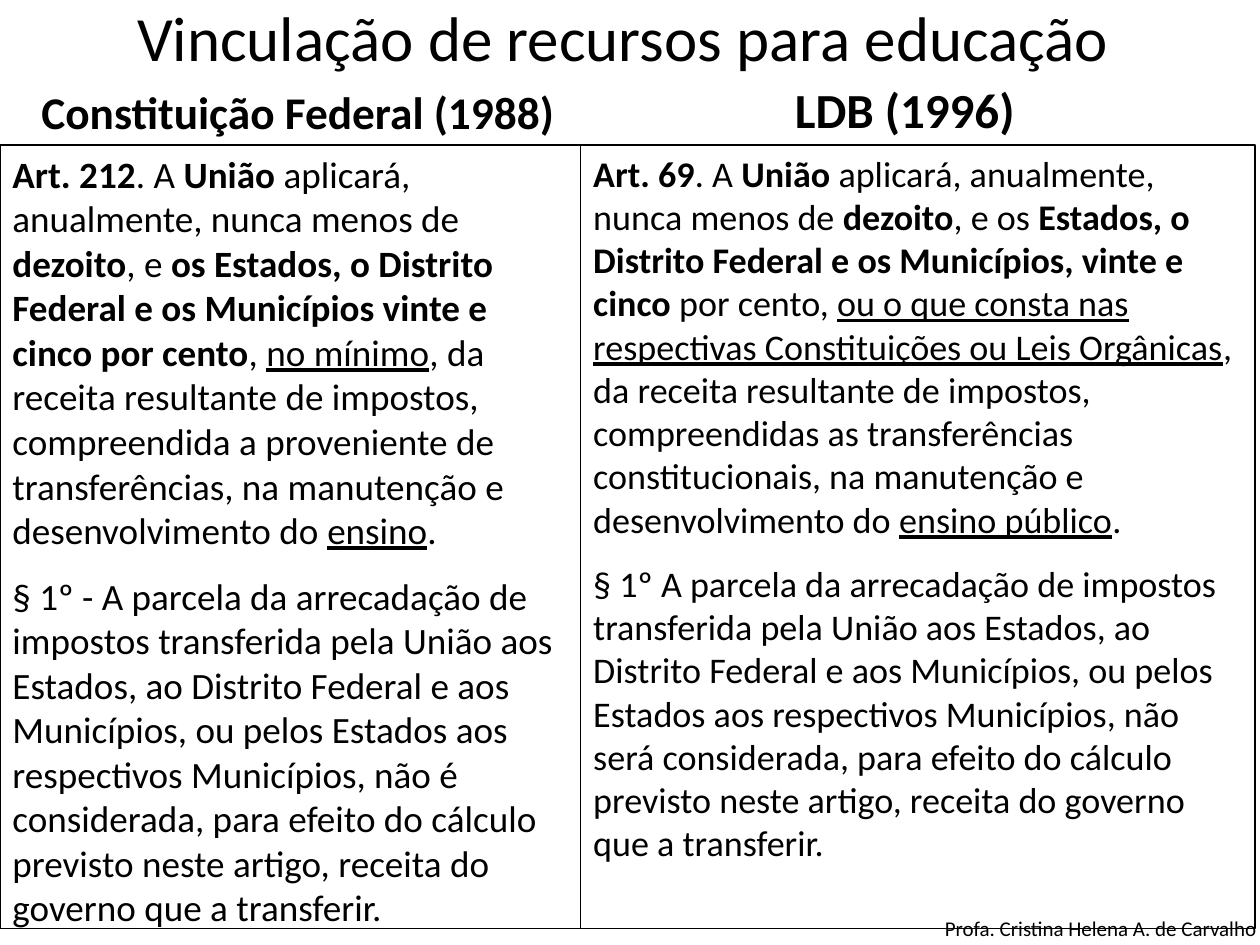
from pptx import Presentation
from pptx.dml.color import RGBColor
from pptx.enum.shapes import MSO_SHAPE
from pptx.enum.text import MSO_ANCHOR, PP_ALIGN
from pptx.util import Inches, Pt

RECT = MSO_SHAPE.RECTANGLE
TOP, MIDDLE, BOTTOM = MSO_ANCHOR.TOP, MSO_ANCHOR.MIDDLE, MSO_ANCHOR.BOTTOM
LEFT, CENTER = PP_ALIGN.LEFT, PP_ALIGN.CENTER

FONT = "Calibri"
COLORS = {"ink": "000000"}
INK = RGBColor.from_string(COLORS["ink"])
BODY_TOP, BODY_HIGH = 1.15, 6.22
SPLIT = 4.61

# Each run is (text, style): "b" is bold, "u" is underlined.
FEDERAL = [
    [("Art. 212", "b"), (". A ", ""), ("União", "b"),
     (" aplicará, anualmente, nunca menos de ", ""), ("dezoito", "b"),
     (", e ", ""),
     ("os Estados, o Distrito Federal e os Municípios vinte e cinco "
      "por cento", "b"),
     (", ", ""), ("no mínimo", "u"),
     (", da receita resultante de impostos, compreendida a proveniente de "
      "transferências, na manutenção e desenvolvimento do ", ""),
     ("ensino", "u"), (".", "")],
    [("§ 1º - A parcela da arrecadação de impostos transferida pela União "
      "aos Estados, ao Distrito Federal e aos Municípios, ou pelos Estados "
      "aos respectivos Municípios, não é considerada, para efeito do cálculo "
      "previsto neste artigo, receita do governo que a transferir.", "")],
]
LDB = [
    [("Art. 69", "b"), (". A ", ""), ("União", "b"),
     (" aplicará, anualmente, nunca menos de ", ""), ("dezoito", "b"),
     (", e os ", ""),
     ("Estados, o Distrito Federal e os Municípios, vinte e cinco", "b"),
     (" por cento, ", ""),
     ("ou o que consta nas respectivas Constituições ou Leis Orgânicas", "u"),
     (", da receita resultante de impostos, compreendidas as transferências "
      "constitucionais, na manutenção e desenvolvimento do ", ""),
     ("ensino público", "u"), (".", "")],
    [("§ 1º A parcela da arrecadação de impostos transferida pela União aos "
      "Estados, ao Distrito Federal e aos Municípios, ou pelos Estados aos "
      "respectivos Municípios, não será considerada, para efeito do cálculo "
      "previsto neste artigo, receita do governo que a transferir.", "")],
]


def set_font(para, size, bold=None):
    font = para.font
    font.name, font.size, font.bold = FONT, Pt(size), bold
    font.color.rgb = INK


def add_label(slide, box, text, size, bold=False, anchor=TOP, align=LEFT,
              wrap=True):
    label = slide.shapes.add_textbox(*map(Inches, box))
    frame = label.text_frame
    frame.word_wrap = wrap
    frame.vertical_anchor = anchor
    para = frame.paragraphs[0]
    para.text = text
    para.alignment = align
    set_font(para, size, bold)


def add_law(slide, left, width, paras, size):
    """Add an outlined column holding the text of one law."""
    box = (left, BODY_TOP, width, BODY_HIGH)
    panel = slide.shapes.add_shape(RECT, *map(Inches, box))
    panel.shadow.inherit = False
    panel.fill.background()
    panel.line.color.rgb = INK
    panel.line.width = Pt(0.75)
    frame = panel.text_frame
    frame.word_wrap = True
    frame.vertical_anchor = TOP
    for index, runs in enumerate(paras):
        para = frame.add_paragraph() if index else frame.paragraphs[0]
        para.alignment = LEFT
        para.space_before = Pt(12)
        set_font(para, size)
        for text, style in runs:
            run = para.add_run()
            run.text = text
            run.font.bold = "b" in style
            run.font.underline = "u" in style


def main():
    deck = Presentation()
    deck.slide_width, deck.slide_height = Inches(10), Inches(7.5)
    slide = deck.slides.add_slide(deck.slide_layouts[6])

    add_label(slide, (7.4, 7.22, 2.72, 0.3),
              "Profa. Cristina Helena A. de Carvalho", 12, wrap=False)
    add_label(slide, (0.5, 0.13, 9, 0.31),
              "Vinculação de recursos para educação ", 36,
              anchor=MIDDLE, align=CENTER)
    add_label(slide, (0.23, 0.68, 4.41, 0.47),
              "Constituição Federal (1988)", 25.9, True, BOTTOM)
    add_law(slide, 0, SPLIT, FEDERAL, 21.2)
    add_label(slide, (6.21, 0.6, 2.42, 0.55), "LDB (1996)", 28, True, BOTTOM)
    add_law(slide, SPLIT, 5.35, LDB, 20.6)

    deck.save("out.pptx")


if __name__ == "__main__":
    main()
